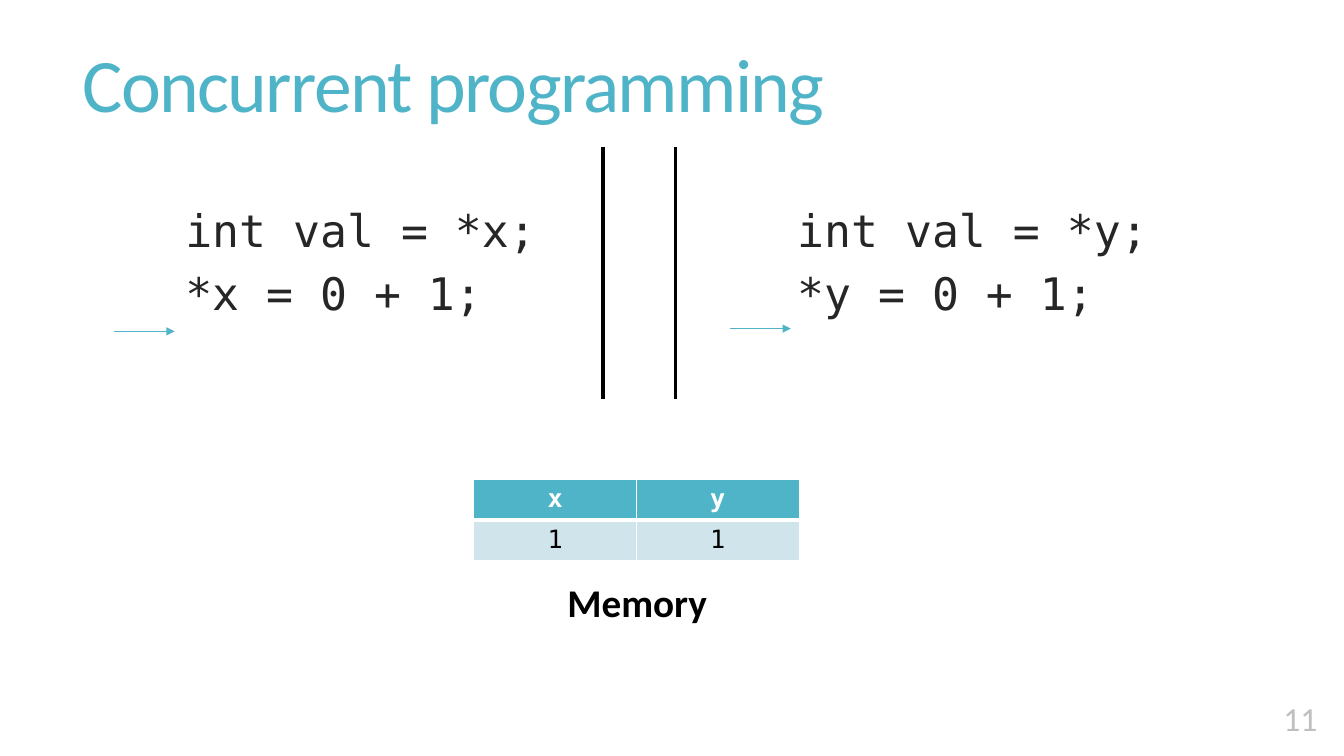
from lxml.etree import SubElement
from pptx import Presentation
from pptx.dml.color import RGBColor
from pptx.enum.shapes import MSO_CONNECTOR
from pptx.enum.text import MSO_ANCHOR, PP_ALIGN
from pptx.oxml.ns import qn
from pptx.util import Cm, Pt

TEAL, PALE, BLACK, WHITE = "50B4C8", "D0E5EB", "000000", "FFFFFF"
DARK, GREY = "262626", "BFBFBF"
SANS, MONO = "Calibri", "DejaVu Sans Mono"


def color(value):
    """Turn a hex string into a colour."""
    return RGBColor.from_string(value)


def write(frame, text, size=18, font=SANS, fill=BLACK, bold=False,
          align=PP_ALIGN.LEFT, anchor=MSO_ANCHOR.TOP, line_spacing=None,
          space_before=0, tracking=0):
    """Fill a text frame with one paragraph per line of text."""
    frame.word_wrap = True
    frame.vertical_anchor = anchor
    for index, line in enumerate(text.split("\n")):
        paragraph = frame.add_paragraph() if index else frame.paragraphs[0]
        paragraph.alignment = align
        paragraph.space_before = Pt(space_before)
        if line_spacing:
            paragraph.line_spacing = line_spacing
        run = paragraph.add_run()
        run.text = line
        run.font.size = Pt(size)
        run.font.name = font
        run.font.bold = bold
        run.font.color.rgb = color(fill)
        if tracking:
            run.font._element.set("spc", str(round(tracking * 100)))


def add_text(slide, box, text, indent=0.25, **style):
    """Add a text box whose text starts at the given indent."""
    frame = slide.shapes.add_textbox(*map(Cm, box)).text_frame
    frame.margin_left = Cm(indent)
    write(frame, text, **style)


def add_line(slide, start, end, stroke, width, arrow=False):
    """Draw a straight line, optionally with an arrowhead at its end."""
    connector = slide.shapes.add_connector(
        MSO_CONNECTOR.STRAIGHT, *map(Cm, (*start, *end)))
    connector.line.color.rgb = color(stroke)
    connector.line.width = Pt(width)
    if arrow:
        SubElement(connector.line._get_or_add_ln(), qn("a:tailEnd"), type="triangle")
    SubElement(connector._element.spPr, qn("a:effectLst"))


def add_thread(slide, box, code, arrow_left, arrow_top):
    """Place a thread's code and the arrow marking its current step."""
    left, top, _, _ = box
    add_text(slide, box, code, indent=2.79, size=32, font=MONO, fill=DARK,
             line_spacing=0.85, space_before=13)
    x, y = left + arrow_left, top + arrow_top
    add_line(slide, (x, y), (x + 1.53, y), TEAL, 0.75, arrow=True)


def add_divider(slide, box):
    """Draw the two vertical lines on the sides of the box."""
    left, top, width, height = box
    for x in (left, left + width):
        add_line(slide, (x, top), (x, top + height), BLACK, 2.5)


def set_borders(cell, **widths):
    """Give a cell white borders, with a width in points per side."""
    properties = cell._tc.get_or_add_tcPr()
    for side, width in widths.items():
        border = SubElement(properties, qn(f"a:ln{side}"), w=str(Pt(width)))
        SubElement(SubElement(border, qn("a:solidFill")), qn("a:srgbClr"), val=WHITE)


def add_memory(slide, box):
    """Place the table of memory values and its caption."""
    left, top, width, height = box
    rows = [("x", "y"), ("1", "1")]
    table = slide.shapes.add_table(2, 2, *map(Cm, box)).table
    for row, values in enumerate(rows):
        header = row == 0
        for column, value in enumerate(values):
            cell = table.cell(row, column)
            set_borders(cell, L=1, R=1, T=1 if header else 3, B=3 if header else 1)
            cell.fill.solid()
            cell.fill.fore_color.rgb = color(TEAL if header else PALE)
            write(cell.text_frame, value, font=MONO, bold=header,
                  fill=WHITE if header else BLACK, align=PP_ALIGN.CENTER)
    add_text(slide, (left + 2.11, top + height + 0.33, 6.93, 1.45), "Memory",
             size=28, bold=True)


def add_heading(slide, box, title):
    """Place the slide title."""
    add_text(slide, box, title, size=54, fill=TEAL, anchor=MSO_ANCHOR.MIDDLE,
             line_spacing=0.85, tracking=-1.2)


def add_page_number(slide, box, number):
    """Place the page number in the corner."""
    add_text(slide, box, number, size=24, fill=GREY, align=PP_ALIGN.RIGHT,
             anchor=MSO_ANCHOR.BOTTOM)


def main():
    """Build the slide and save it."""
    presentation = Presentation()
    presentation.slide_width, presentation.slide_height = Cm(33.87), Cm(19.05)
    slide = presentation.slides.add_slide(presentation.slide_layouts[6])
    add_heading(slide, (1.83, -0.05, 29.92, 4.6), "Concurrent programming")
    add_thread(slide, (1.88, 5.18, 14.45, 13.87), "int val = *x;\n*x = 0 + 1;", 0.99, 3.17)
    add_thread(slide, (17.3, 5.18, 14.45, 13.87), "int val = *y;\n*y = 0 + 1;", 1.1, 3.1)
    add_divider(slide, (15.19, 3.71, 1.83, 6.35))
    add_memory(slide, (11.94, 12.07, 8.2, 2.06))
    add_page_number(slide, (27.76, 16.99, 5.69, 1.75), "11")
    presentation.save("out.pptx")


if __name__ == "__main__":
    main()
